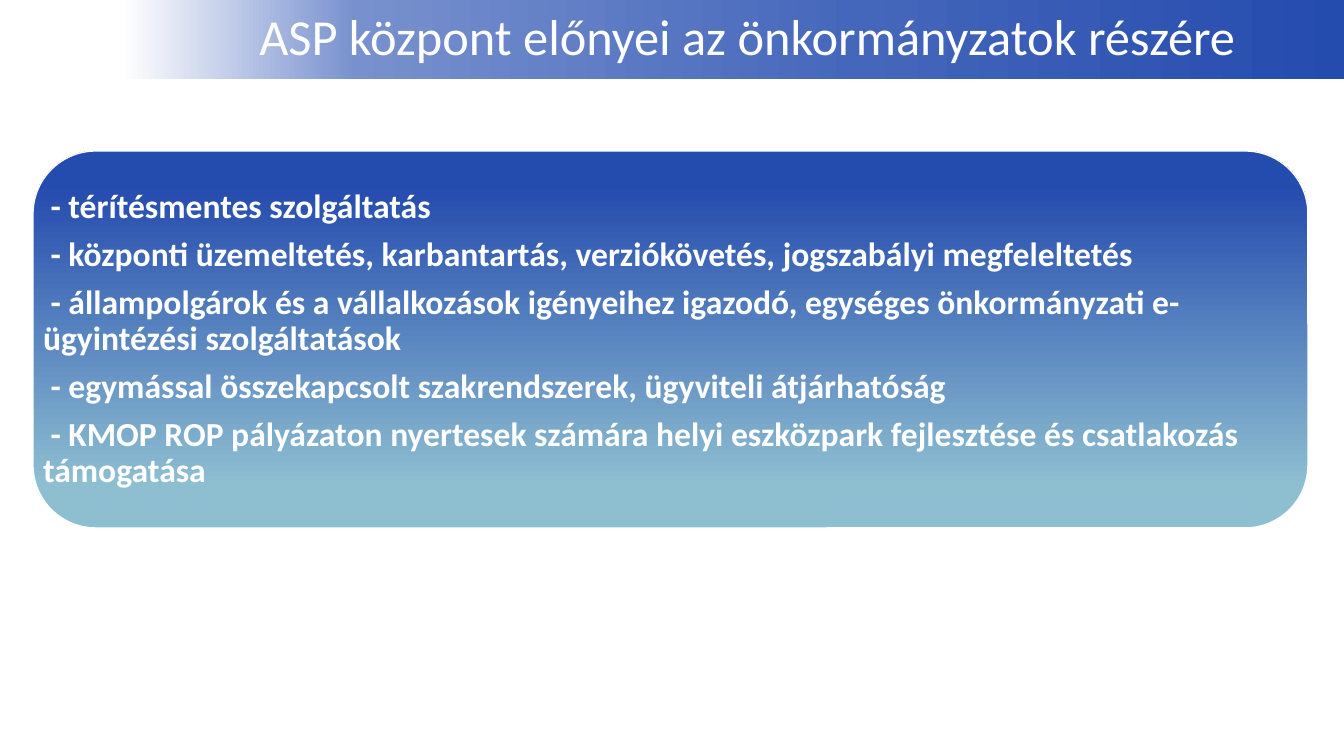
from dataclasses import dataclass

from lxml import etree
from pptx import Presentation
from pptx.dml.color import RGBColor
from pptx.enum.shapes import MSO_SHAPE
from pptx.enum.text import MSO_ANCHOR, MSO_AUTO_SIZE, PP_ALIGN
from pptx.oxml.ns import qn
from pptx.util import Emu, Pt

RECTANGLE = MSO_SHAPE.RECTANGLE
ROUNDED = MSO_SHAPE.ROUNDED_RECTANGLE
MIDDLE = MSO_ANCHOR.MIDDLE
NO_AUTOFIT = MSO_AUTO_SIZE.NONE
LEFT, CENTER = PP_ALIGN.LEFT, PP_ALIGN.CENTER
EMU_PER_PX = 914400 / 100.8


@dataclass(frozen=True)
class Theme:
    font: str = "Calibri"
    white: str = "FFFFFF"
    title_size: int = 36
    body_size: int = 24
    body_space: float = 8.4
    band: tuple = ((0, "FFFFFF"), (19, "7891CE"), (60, "4567BB"), (100, "244BAE"))
    card: tuple = ((11, "8EBFD1"), (91, "244BAE"))


def px(length):
    return Emu(round(length * EMU_PER_PX))


class SlideBuilder:
    def __init__(self, slide, theme):
        self.slide = slide
        self.theme = theme

    def place(self, shape, box):
        shape.left, shape.top, shape.width, shape.height = map(px, box)

    def gradient_shape(self, preset, box, stops, angle, outlined=False):
        shape = self.slide.shapes.add_shape(preset, *map(px, box))
        shape.shadow.inherit = False
        shape.fill.gradient()
        shape.fill.gradient_angle = angle
        stop_list = shape._element.spPr.find(".//" + qn("a:gsLst"))
        stop_list.clear()
        for position, color in stops:
            stop = etree.SubElement(stop_list, qn("a:gs"), pos=str(position * 1000))
            etree.SubElement(stop, qn("a:srgbClr"), val=color)
        if outlined:
            shape.line.color.rgb = RGBColor.from_string(self.theme.white)
            shape.line.width = Pt(1)
        else:
            shape.line.fill.background()

    def text(self, placeholder, box, lines, size, alignment, bold=False, space_after=0):
        self.place(placeholder, box)
        tree = self.slide.shapes._spTree
        tree.append(placeholder._element)
        frame = placeholder.text_frame
        frame.text = "\n".join(lines)
        frame.word_wrap = True
        frame.auto_size = NO_AUTOFIT
        frame.vertical_anchor = MIDDLE
        frame.margin_left = frame.margin_right = px(10)
        frame.margin_top = frame.margin_bottom = px(10)
        for paragraph in frame.paragraphs:
            properties = paragraph._p.get_or_add_pPr()
            properties.set("marL", "0")
            properties.set("indent", "0")
            etree.SubElement(properties, qn("a:buNone"))
            paragraph.alignment = alignment
            paragraph.line_spacing = 0.9
            paragraph.space_before = Pt(0)
            paragraph.space_after = Pt(space_after)
            for run in paragraph.runs:
                run.font.name = self.theme.font
                run.font.size = Pt(size)
                run.font.bold = bold
                run.font.color.rgb = RGBColor.from_string(self.theme.white)


def main():
    theme = Theme()
    presentation = Presentation()
    presentation.slide_width = px(1344)
    presentation.slide_height = px(756)
    slide = presentation.slides.add_slide(presentation.slide_layouts[1])
    builder = SlideBuilder(slide, theme)
    card_box = (33, 151, 1275, 377)
    benefits = [
        " - térítésmentes szolgáltatás",
        " - központi üzemeltetés, karbantartás, verziókövetés, jogszabályi megfeleltetés",
        " - állampolgárok és a vállalkozások igényeihez igazodó, egységes önkormányzati e-ügyintézési szolgáltatások",
        " - egymással összekapcsolt szakrendszerek, ügyviteli átjárhatóság",
        " - KMOP ROP pályázaton nyertesek számára helyi eszközpark fejlesztése és csatlakozás támogatása",
    ]
    builder.gradient_shape(RECTANGLE, (123, 0, 1221, 79), theme.band, 0)
    builder.gradient_shape(ROUNDED, card_box, theme.card, 90, outlined=True)
    builder.text(slide.placeholders[1], card_box, benefits, theme.body_size, LEFT,
                 bold=True, space_after=theme.body_space)
    builder.text(slide.shapes.title, (151, 0, 1193, 78),
                 ["ASP központ előnyei az önkormányzatok részére"], theme.title_size, CENTER)
    presentation.save("out.pptx")


if __name__ == "__main__":
    main()
